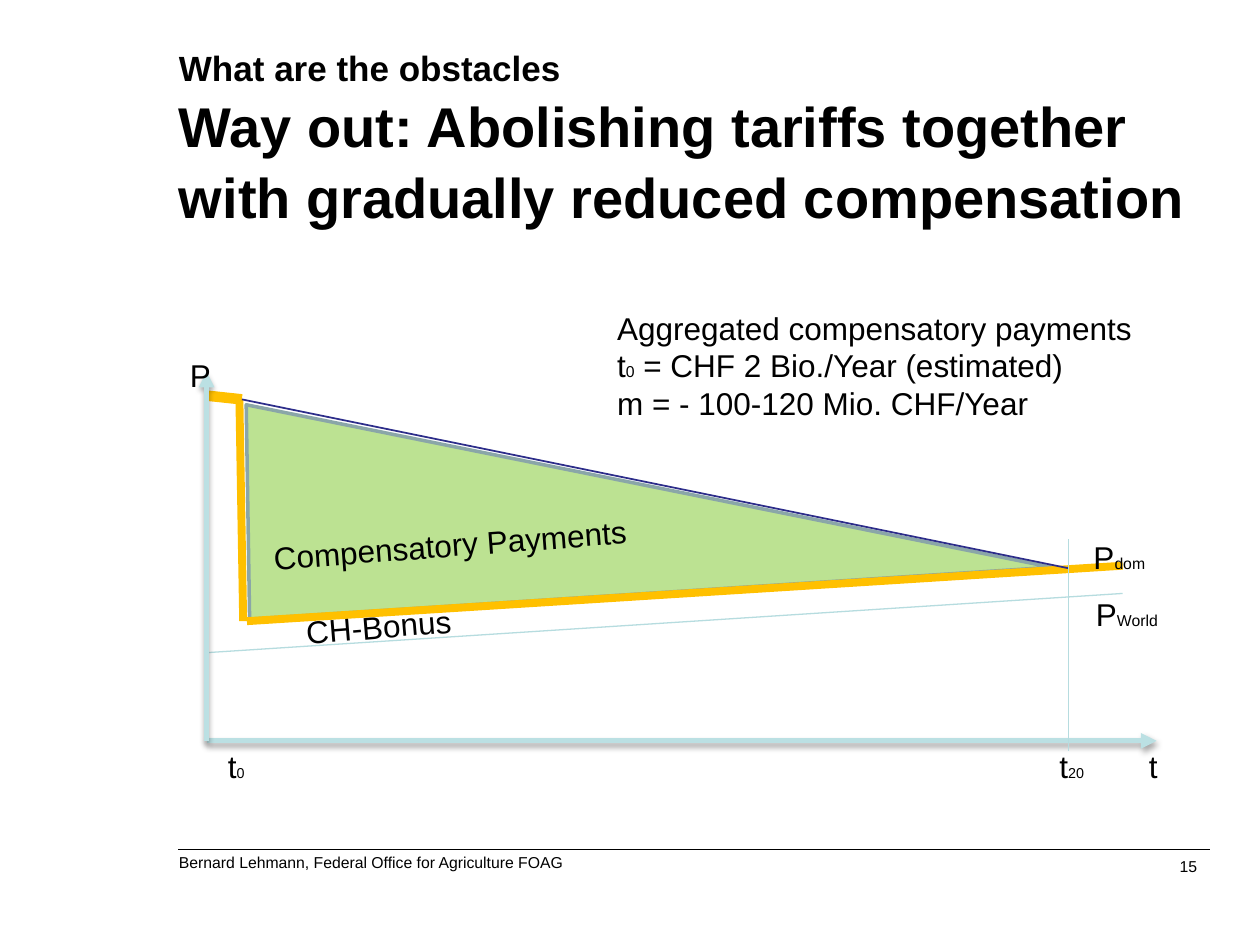
from lxml import etree
from pptx import Presentation
from pptx.dml.color import RGBColor
from pptx.enum.shapes import MSO_CONNECTOR, MSO_SHAPE
from pptx.enum.text import MSO_ANCHOR, PP_ALIGN
from pptx.oxml.ns import qn
from pptx.util import Inches, Pt

STRAIGHT = MSO_CONNECTOR.STRAIGHT
TRIANGLE = MSO_SHAPE.ISOSCELES_TRIANGLE
TOP = MSO_ANCHOR.TOP
LEFT, RIGHT = PP_ALIGN.LEFT, PP_ALIGN.RIGHT

WIDTH, HEIGHT = Inches(10), Inches(7.5)
COLS, ROWS = 100, 75
FONT = "Arial"
BLACK, ORANGE, AXIS, THIN = "000000", "FFC000", "BBE0E3", "B6DCDF"
ORIGIN_X, ORIGIN_Y = 16.4, 58.8
START_X, START_Y = 19.2, 31.7
END_X, END_Y = 84.8, 45.1
RIGHT_X = 89.1
LABEL_H = 4


def color(value):
    return RGBColor.from_string(value)


def col(n):
    return round(WIDTH * n / COLS)


def row(n):
    return round(HEIGHT * n / ROWS)


def box(x, y, w, h):
    return col(x), row(y), col(w), row(h)


def write(tf, paragraphs, size=18, bold=False, align=LEFT, spacing=1):
    for i, runs in enumerate(paragraphs):
        p = tf.paragraphs[0] if i == 0 else tf.add_paragraph()
        p.alignment = align
        p.line_spacing = spacing
        p.space_before = Pt(0)
        for text, run_size in runs:
            if text == "\n":
                p.add_line_break()
                continue
            r = p.add_run()
            r.text = text
            r.font.name = FONT
            r.font.size = Pt(run_size or size)
            r.font.bold = bold
            r.font.color.rgb = color(BLACK)


def set_insets(tf, inset):
    tf.margin_left = tf.margin_right = tf.margin_top = tf.margin_bottom = inset


def add_text(slide, place, paragraphs, rotation=0, wrap=False, inset=None, **fmt):
    sp = slide.shapes.add_textbox(*box(*place))
    sp.rotation = rotation
    tf = sp.text_frame
    tf.word_wrap = wrap
    if inset is not None:
        set_insets(tf, inset)
    write(tf, paragraphs, **fmt)


def add_line(slide, x1, y1, x2, y2, line_color, width):
    line = slide.shapes.add_connector(STRAIGHT, col(x1), row(y1), col(x2), row(y2))
    line.line.color.rgb = color(line_color)
    line.line.width = Pt(width)
    etree.SubElement(line._element.spPr, qn("a:effectLst"))
    return line


def add_axis(slide, x, y):
    axis = add_line(slide, ORIGIN_X, ORIGIN_Y, x, y, AXIS, 3)
    etree.SubElement(axis.line._get_or_add_ln(), qn("a:tailEnd"), type="triangle")
    effects = axis._element.spPr.find(qn("a:effectLst"))
    shadow = etree.SubElement(
        effects, qn("a:outerShdw"), blurRad=str(Pt(3.1)), dist=str(Pt(1.8)),
        dir="5400000", rotWithShape="0")
    tint = etree.SubElement(shadow, qn("a:srgbClr"), val=BLACK)
    etree.SubElement(tint, qn("a:alpha"), val="35000")


def add_title(slide):
    title = slide.shapes.title
    title.left, title.top, title.width, title.height = box(14.2, 3.5, 81.6, 10.8)
    tf = title.text_frame
    tf.word_wrap = True
    tf.vertical_anchor = TOP
    set_insets(tf, 0)
    write(tf, [[
        ("What are the obstacles", 20),
        ("\n", None),
        ("Way out: Abolishing tariffs together with gradually reduced compensation", 32),
    ]], bold=True, spacing=1.05)


def add_footer(slide):
    small = {"size": 9, "spacing": 1.05, "wrap": True, "inset": 0}
    add_text(slide, (70.5, 67.9, 24.5, 1.6), [[("15", None)]], align=RIGHT, **small)
    add_text(slide, (14.2, 67.6, 71, 1.6),
             [[("Bernard Lehmann, Federal Office for Agriculture FOAG", None)]], **small)
    add_line(slide, 96, 67.4, 14.1, 67.4, BLACK, 0.75)


def add_payment_area(slide):
    sp = slide.shapes.add_shape(TRIANGLE, *box(START_X, 30.1, 63.8, 17))
    sp.adjustments[0] = 0.013
    sp.rotation = 356.3
    sp.shadow.inherit = False
    sp.fill.solid()
    sp.fill.fore_color.rgb = color("BCE292")
    sp.line.color.rgb = color("8AA6A8")
    sp.line.width = Pt(2)


def add_diagram(slide):
    add_payment_area(slide)
    add_axis(slide, 91.8, ORIGIN_Y)
    add_line(slide, ORIGIN_X, 31.4, START_X, START_Y, ORANGE, 6)
    add_line(slide, 19, START_Y, 19.3, 49.3, ORANGE, 4.5)
    add_line(slide, ORIGIN_X, 51.8, RIGHT_X, 47.1, THIN, 0.75)
    add_axis(slide, ORIGIN_X, 29.5)
    add_line(slide, 19.6, 49.3, RIGHT_X, 44.9, ORANGE, 4.5)
    add_line(slide, START_X, START_Y, END_X, END_Y, "2D2D8A", 1)
    add_line(slide, END_X, 42.8, END_X, 59.6, THIN, 0.75)


def add_labels(slide):
    labels = [
        (14.1, 27.8, 3.7, 0, "P", "", None),
        (90.2, ORIGIN_Y, 2.7, 0, "t", "", None),
        (23.3, 47.7, 13.7, 355.3, "CH-Bonus", "", None),
        (85.8, 42.2, 6.2, 0, "P", "dom", 9),
        (86, 46.7, 7, 0, "P", "World", 9),
        (17.1, ORIGIN_Y, 3.4, 0, "t", "0", 8.2),
        (83.1, ORIGIN_Y, 4, 0, "t", "20", 8.2),
        (20.7, 41.2, 30.3, 355.7, "Compensatory Payments", "", None),
    ]
    for x, y, w, rotation, text, index, index_size in labels:
        runs = [(text, None)] + ([(index, index_size)] if index else [])
        add_text(slide, (x, y, w, LABEL_H), [runs], rotation=rotation)
    add_text(slide, (48, 24, 43.3, 10.1), [
        [("Aggregated compensatory payments", None)],
        [("t", None), ("0", 9), (" = CHF 2 Bio./Year (estimated)", None)],
        [("m = - 100-120 Mio. CHF/Year", None)],
    ])


def main():
    prs = Presentation()
    prs.slide_width, prs.slide_height = WIDTH, HEIGHT
    slide = prs.slides.add_slide(prs.slide_layouts[5])
    add_footer(slide)
    add_title(slide)
    add_diagram(slide)
    add_labels(slide)
    prs.save("out.pptx")


if __name__ == "__main__":
    main()
